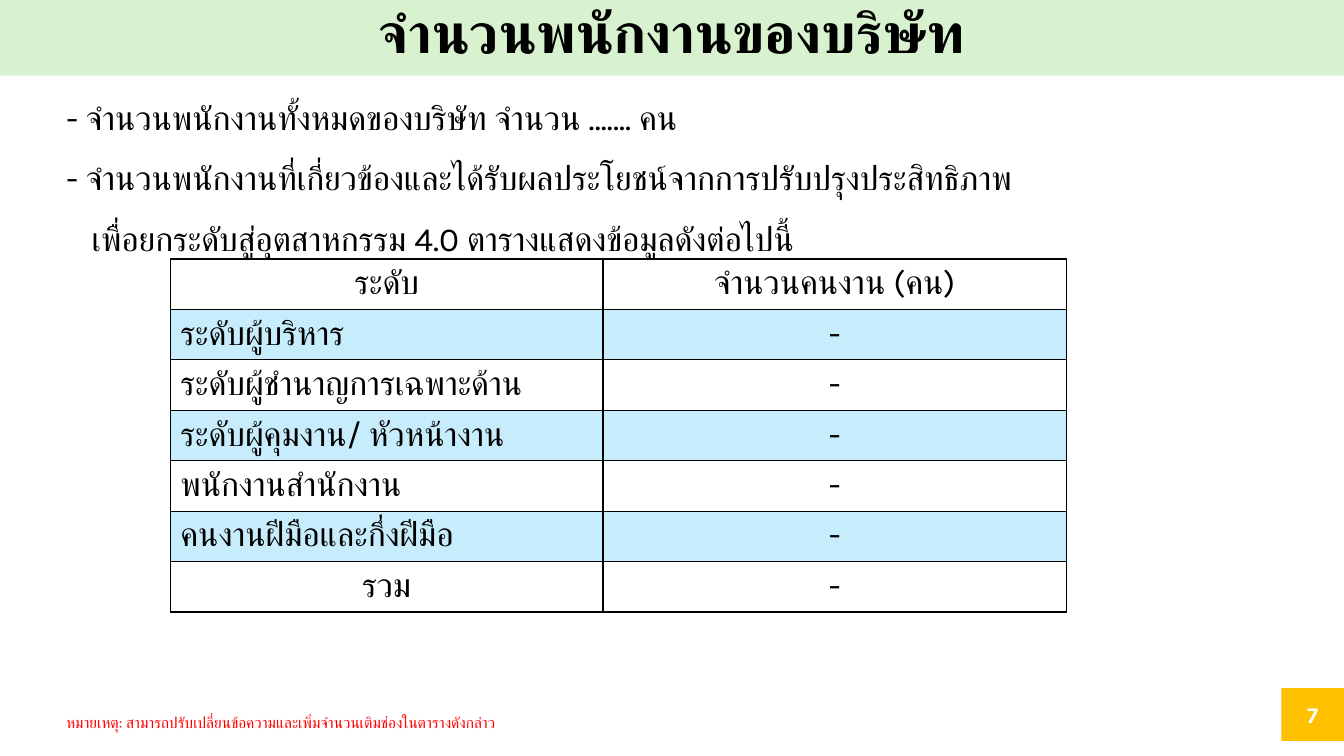
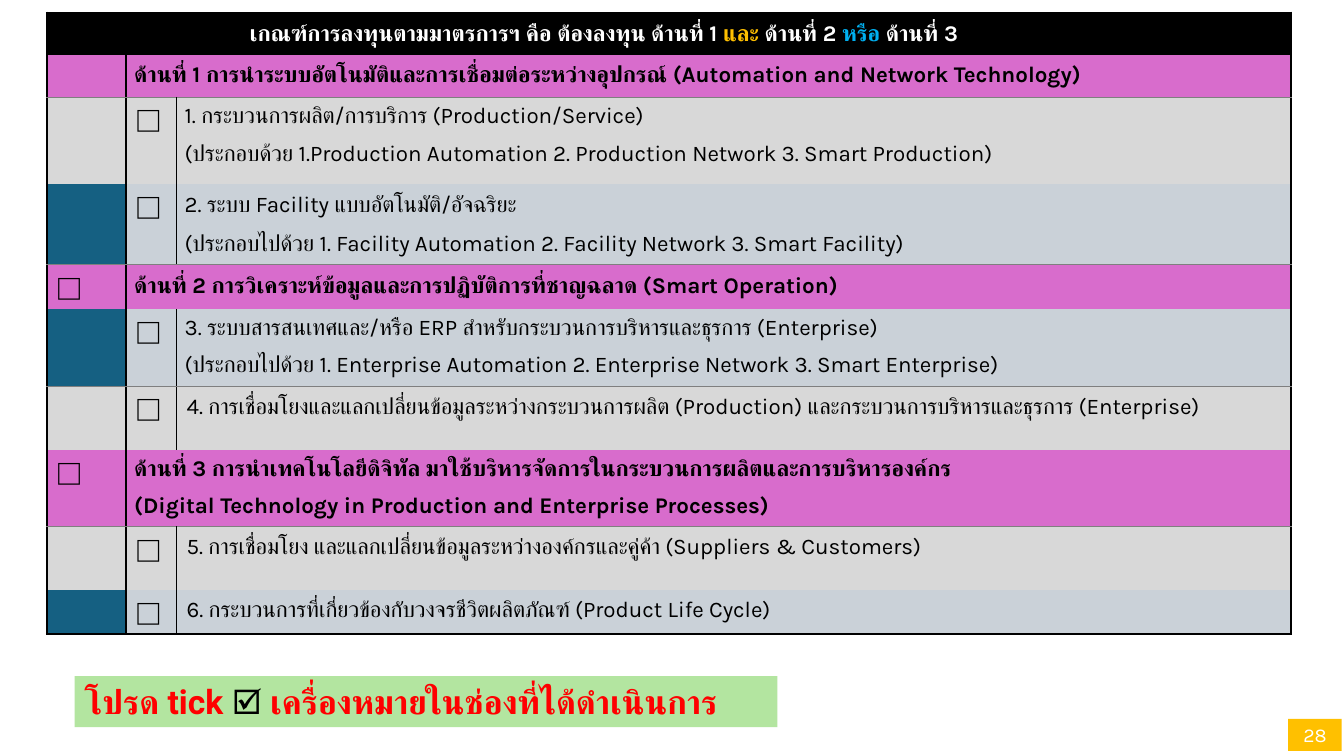
from dataclasses import dataclass
from typing import NamedTuple, Optional

from lxml import etree
from pptx import Presentation
from pptx.dml.color import RGBColor
from pptx.enum import shapes, text
from pptx.oxml import ns
from pptx.util import Pt


@dataclass(frozen=True)
class Theme:
    black: str = "000000"
    white: str = "FFFFFF"
    red: str = "FF0000"
    amber: str = "FFC000"
    sky: str = "00B0F0"
    title_band: str = "D8F2CF"
    tick_band: str = "B3E5A0"
    stripe: str = "C7EDFC"
    section: str = "D86CCC"
    teal: str = "156082"
    grey: str = "D8D8D8"
    blue_grey: str = "CAD1D8"
    rule: str = "7F7F7F"
    body_font: str = "Karla"
    title_font: str = "Lato"
    mark_font: str = "Roboto"
    title: int = 40
    large: int = 24
    mark: int = 18
    body: int = 16
    note: int = 11


T = Theme()
LEFT, CENTER = text.PP_ALIGN.LEFT, text.PP_ALIGN.CENTER
TOP, MIDDLE = text.MSO_ANCHOR.TOP, text.MSO_ANCHOR.MIDDLE
NO_STYLE = "{2D5ABB26-0587-4C30-8999-92F81FD0307C}"


class Run(NamedTuple):
    text: str
    size: float = T.body
    color: str = T.black
    bold: bool = False
    font: str = T.body_font


class Para(NamedTuple):
    runs: list[Run]
    align: text.PP_ALIGN = LEFT
    spacing: float = 1.0
    before: float = 0
    indent: float = 0


class Box(NamedTuple):
    left: float
    top: float
    width: float
    height: float


class Insets(NamedTuple):
    left: float
    top: float
    right: float
    bottom: float


class Line(NamedTuple):
    color: str
    width: float


class Criterion(NamedTuple):
    height: float
    lead_fill: str
    fill: str
    lines: list[str]
    spacing: float = 1.07
    indent: float = 0
    ticked: bool = True
    rule: Optional[Line] = None


NORMAL = Insets(7.2, 3.6, 7.2, 3.6)
TIGHT = Insets(5.8, 4.3, 1.4, 4.3)
NONE = Insets(0, 0, 0, 0)
THIN = Line(T.black, 1)
EDGE = Line(T.black, 1.5)
RULE = Line(T.rule, 0.75)


def rgb(color: str) -> RGBColor:
    return RGBColor.from_string(color)


def write(tf, paras: list[Para]) -> None:
    for i, para in enumerate(paras):
        p = tf.paragraphs[0] if i == 0 else tf.add_paragraph()
        p.alignment = para.align
        p.line_spacing = para.spacing
        if para.before:
            p.space_before = Pt(para.before)
        if para.indent:
            p_pr = p._p.get_or_add_pPr()
            p_pr.set("marL", str(Pt(para.indent)))
            p_pr.set("indent", "0")
        for run in para.runs:
            r = p.add_run()
            r.text = run.text
            r.font.size = Pt(run.size)
            r.font.bold = run.bold
            r.font.color.rgb = rgb(run.color)
            r.font.name = run.font
            cs = etree.SubElement(r.font._element, ns.qn("a:cs"))
            cs.set("typeface", run.font)


def set_insets(target, insets: Insets) -> None:
    for side, value in insets._asdict().items():
        setattr(target, f"margin_{side}", Pt(value))


def add_box(s, box: Box, paras: list[Para], fill: Optional[str] = None,
            anchor=TOP, insets: Insets = NORMAL):
    pos = [Pt(v) for v in box]
    if fill:
        sp = s.shapes.add_shape(shapes.MSO_SHAPE.RECTANGLE, *pos)
        sp.shadow.inherit = False
        sp.fill.solid()
        sp.fill.fore_color.rgb = rgb(fill)
        sp.line.fill.background()
    else:
        sp = s.shapes.add_textbox(*pos)
    tf = sp.text_frame
    tf.word_wrap = True
    tf.vertical_anchor = anchor
    set_insets(tf, insets)
    write(tf, paras)
    return sp


def add_page_number(s, box: Box, number: Run) -> None:
    add_box(s, box, [Para([number], CENTER)], T.amber, MIDDLE, NONE)


def add_grid(s, left: float, top: float, widths: list[float], heights: list[float]):
    frame = s.shapes.add_table(len(heights), len(widths), Pt(left), Pt(top),
                               Pt(sum(widths)), Pt(sum(heights)))
    next(frame.element.iter(ns.qn("a:tableStyleId"))).text = NO_STYLE
    table = frame.table
    table.first_row = table.horz_banding = False
    for column, width in zip(table.columns, widths):
        column.width = Pt(width)
    for row, height in zip(table.rows, heights):
        row.height = Pt(height)
    return table


def set_border(cell, side: str, line: Optional[Line]) -> None:
    ln = etree.SubElement(cell._tc.get_or_add_tcPr(), ns.qn(f"a:ln{side}"))
    if line is None:
        etree.SubElement(ln, ns.qn("a:noFill"))
        return
    ln.set("w", str(Pt(line.width)))
    solid = etree.SubElement(ln, ns.qn("a:solidFill"))
    etree.SubElement(solid, ns.qn("a:srgbClr")).set("val", line.color)


def fill_cells(table, row: int, col: int, fill: str, paras: list[Para],
               borders: dict[str, Optional[Line]], span: int = 1,
               anchor=TOP, insets: Insets = NORMAL) -> None:
    cells = [table.cell(row, col + k) for k in range(span)]
    if span > 1:
        cells[0].merge(cells[-1])
    for cell in cells:
        for side in "LRTB":
            set_border(cell, side, borders.get(side))
        cell.fill.solid()
        cell.fill.fore_color.rgb = rgb(fill)
        set_insets(cell, insets if paras else NONE)
    cells[0].vertical_anchor = anchor
    write(cells[0].text_frame, paras)


def build_staff(prs) -> None:
    s = prs.slides.add_slide(prs.slide_layouts[6])
    intro = [
        ("- จำนวนพนักงานทั้งหมดของบริษัท จำนวน ……. คน", 0),
        ("- จำนวนพนักงานที่เกี่ยวข้องและได้รับผลประโยชน์จากการปรับปรุงประสิทธิภาพ", 0),
        ("เพื่อยกระดับสู่อุตสาหกรรม 4.0 ตารางแสดงข้อมูลดังต่อไปนี้", 18),
    ]
    add_box(s, Box(40.3, 54, 828, 131),
            [Para([Run(words, T.large)], spacing=1.5, indent=indent)
             for words, indent in intro], anchor=MIDDLE)

    levels = [
        ("ระดับ", "จำนวนคนงาน (คน)"),
        ("ระดับผู้บริหาร", "-"),
        ("ระดับผู้ชำนาญการเฉพาะด้าน", "-"),
        ("ระดับผู้คุมงาน/ หัวหน้างาน", "-"),
        ("พนักงานสำนักงาน", "-"),
        ("คนงานฝีมือและกึ่งฝีมือ", "-"),
        ("รวม", "-"),
    ]
    heights = [36 if i == 2 else 29.5 for i in range(len(levels))]
    table = add_grid(s, 121.7, 185, [309, 331.2], heights)
    for i, level in enumerate(levels):
        for j, words in enumerate(level):
            centred = j == 1 or i in (0, len(levels) - 1)
            fill_cells(table, i, j, T.stripe if i % 2 else T.white,
                       [Para([Run(words, T.large)], CENTER if centred else LEFT)],
                       dict.fromkeys("LRTB", THIN))

    title = Run("จำนวนพนักงานของบริษัท", T.title, bold=True, font=T.title_font)
    add_box(s, Box(0, 0, 960, 54), [Para([title], CENTER, 0.9)], T.title_band)
    note = Run("หมายเหตุ: สามารถปรับเปลี่ยนข้อความและเพิ่มจำนวนเติมช่องในตารางดังกล่าว",
               T.note, T.red)
    add_box(s, Box(40.3, 497, 828, 31.5), [Para([note], spacing=1.5)], T.white, MIDDLE)
    add_page_number(s, Box(915.3, 491.6, 44.7, 37.6), Run("7", 16, T.white, True))


def build_criteria(prs) -> None:
    s = prs.slides.add_slide(prs.slide_layouts[6])
    criteria = [
        Criterion(30.5, T.section, T.section, [
            "ด้านที่ 1 การนำระบบอัตโนมัติและการเชื่อมต่อระหว่างอุปกรณ์ (Automation and Network Technology)",
        ], ticked=False, rule=RULE),
        Criterion(62, T.grey, T.grey, [
            "1. กระบวนการผลิต/การบริการ (Production/Service)",
            "(ประกอบด้วย 1.Production Automation 2. Production Network 3. Smart Production)",
        ], 1.0),
        Criterion(57, T.teal, T.blue_grey, [
            "2. ระบบ Facility แบบอัตโนมัติ/อัจฉริยะ",
            "(ประกอบไปด้วย 1. Facility Automation 2. Facility Network 3. Smart Facility)",
        ], rule=RULE),
        Criterion(31.5, T.section, T.section, [
            "ด้านที่ 2 การวิเคราะห์ข้อมูลและการปฏิบัติการที่ชาญฉลาด (Smart Operation)",
        ]),
        Criterion(54, T.teal, T.blue_grey, [
            "3. ระบบสารสนเทศและ/หรือ ERP สำหรับกระบวนการบริหารและธุรการ (Enterprise)",
            "(ประกอบไปด้วย 1. Enterprise Automation 2. Enterprise Network 3. Smart Enterprise)",
        ], 1.0, rule=RULE),
        Criterion(45.5, T.grey, T.grey, [
            "4. การเชื่อมโยงและแลกเปลี่ยนข้อมูลระหว่างกระบวนการผลิต (Production) และกระบวนการบริหารและธุรการ (Enterprise)",
        ], indent=1.4),
        Criterion(54.5, T.section, T.section, [
            "ด้านที่ 3 การนำเทคโนโลยีดิจิทัล มาใช้บริหารจัดการในกระบวนการผลิตและการบริหารองค์กร",
            "(Digital Technology in Production and Enterprise Processes)",
        ], 1.0, rule=RULE),
        Criterion(45, T.grey, T.grey, [
            "5. การเชื่อมโยง และแลกเปลี่ยนข้อมูลระหว่างองค์กรและคู่ค้า (Suppliers & Customers)",
        ], indent=1.4),
        Criterion(31, T.teal, T.blue_grey, [
            "6. กระบวนการที่เกี่ยวข้องกับวงจรชีวิตผลิตภัณฑ์ (Product Life Cycle)",
        ], indent=1.4, rule=THIN),
    ]
    table = add_grid(s, 33.4, 9, [56.7, 36, 642, 154.3],
                     [30] + [c.height for c in criteria])
    heading = [Run(words, color=color, bold=True) for words, color in [
        ("เกณฑ์การลงทุนตามมาตรการฯ คือ ต้องลงทุน ด้านที่ 1 ", T.white),
        ("และ", T.amber),
        (" ด้านที่ 2 ", T.white),
        ("หรือ", T.sky),
        (" ด้านที่ 3", T.white),
    ]]
    fill_cells(table, 0, 0, T.black, [], {"L": EDGE, "T": EDGE})
    fill_cells(table, 0, 1, T.black, [Para(heading, CENTER, 1.07)], {"T": EDGE},
               2, MIDDLE, TIGHT)
    fill_cells(table, 0, 3, T.black, [], {"T": EDGE, "R": EDGE})

    tick = [Para([Run("⬜", T.mark, font=T.mark_font)], spacing=1.07, indent=1.4)]
    rule = None
    for i, c in enumerate(criteria, 1):
        is_section = c.fill == T.section
        rules = {"T": rule, "B": c.rule}
        rule = c.rule
        paras = [Para([Run(words, bold=is_section)], spacing=c.spacing,
                      before=8 if k else 0, indent=c.indent)
                 for k, words in enumerate(c.lines)]
        fill_cells(table, i, 0, c.lead_fill, tick if is_section and c.ticked else [],
                   {"L": EDGE, "R": EDGE, **rules}, insets=TIGHT)
        if is_section:
            fill_cells(table, i, 1, c.fill, paras, {"L": EDGE, "R": EDGE, **rules},
                       3, insets=TIGHT)
        else:
            fill_cells(table, i, 1, c.fill, tick, {"L": EDGE, "R": THIN, **rules},
                       insets=TIGHT)
            fill_cells(table, i, 2, c.fill, paras, {"L": THIN, "R": EDGE, **rules},
                       2, insets=TIGHT)

    request = [Run(words, T.large, color, True, T.mark_font) for words, color in [
        ("โปรด tick ", T.red),
        ("🗹 ", T.black),
        ("เครื่องหมายในช่องที่ได้ดำเนินการ", T.red),
    ]]
    add_box(s, Box(53.3, 483, 502, 36.4), [Para(request)], T.tick_band)
    add_page_number(s, Box(920.2, 513.4, 38.2, 23), Run("28", 14, T.white))


def main() -> None:
    prs = Presentation()
    prs.slide_width, prs.slide_height = Pt(960), Pt(540)
    build_staff(prs)
    build_criteria(prs)
    prs.save("out.pptx")


if __name__ == "__main__":
    main()
